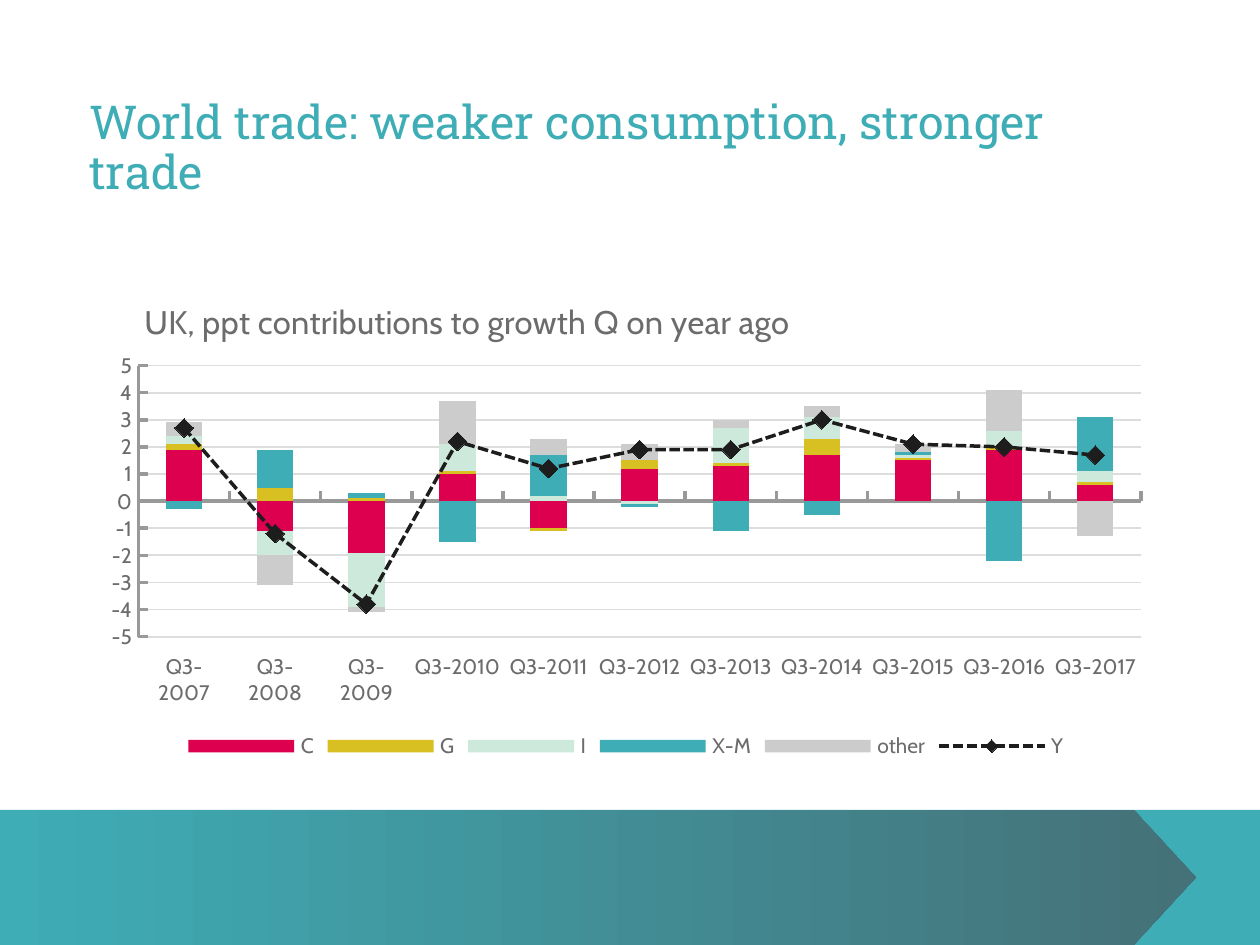
"""Build the slide on UK contributions to growth: stacked columns with a growth line."""
from pptx import Presentation
from pptx.chart.data import CategoryChartData
from pptx.dml.color import RGBColor
from pptx.enum.chart import XL_CHART_TYPE as ChartType, XL_LEGEND_POSITION as LegendPos
from pptx.enum.chart import XL_MARKER_STYLE as Marker, XL_TICK_LABEL_POSITION as LabelPos
from pptx.enum.chart import XL_TICK_MARK as Tick
from pptx.enum.dml import MSO_LINE_DASH_STYLE as Dash
from pptx.enum.shapes import MSO_SHAPE as Preset
from pptx.enum.text import MSO_ANCHOR as Anchor
from pptx.oxml import parse_xml
from pptx.oxml.ns import nsdecls, qn
from pptx.util import Pt

TEAL = RGBColor(0x3E, 0xAD, 0xB6)
SLATE = RGBColor(0x45, 0x71, 0x78)
CRIMSON = RGBColor(0xDC, 0x00, 0x4E)
MUSTARD = RGBColor(0xD8, 0xBF, 0x22)
MINT = RGBColor(0xCC, 0xE9, 0xDB)
SILVER = RGBColor(0xCC, 0xCC, 0xCC)
INK = RGBColor(0x1D, 0x1D, 0x1D)
LABEL = RGBColor(0x6C, 0x6C, 0x6C)
AXIS = RGBColor(0x99, 0x99, 0x99)
GRID = RGBColor(0xDD, 0xDD, 0xDD)

HEADLINE = "World trade: weaker consumption, stronger trade"
CHART_TITLE = "UK, ppt contributions to growth Q on year ago"
QUARTERS = [f"Q3-{year}" for year in range(2007, 2018)]
CONTRIBUTIONS = [
    ("C", CRIMSON, (1.9, -1.1, -1.9, 1, -1, 1.2, 1.3, 1.7, 1.5, 1.9, 0.6)),
    ("G", MUSTARD, (0.2, 0.5, 0.1, 0.1, -0.1, 0.3, 0.1, 0.6, 0.1, 0.1, 0.1)),
    ("I", MINT, (0.3, -0.9, -2, 1, 0.2, -0.1, 1.3, 0.8, 0.1, 0.6, 0.4)),
    ("X-M", TEAL, (-0.3, 1.4, 0.2, -1.5, 1.5, -0.1, -1.1, -0.5, 0.1, -2.2, 2)),
    ("other", SILVER, (0.5, -1.1, -0.2, 1.6, 0.6, 0.6, 0.3, 0.4, 0.3, 1.5, -1.3)),
]
GROWTH = ("Y", (2.7, -1.2, -3.8, 2.2, 1.2, 1.9, 1.9, 3, 2.1, 2, 1.7))

WIDTH, HEIGHT = 540, 405
BAND_TOP = 347.1
BAND_HEIGHT = HEIGHT - BAND_TOP
ARROW_WIDTH = 512.5
LEFT, CONTENT_WIDTH = 38.2, 460


def style_font(font, name, size, color):
    font.name, font.size, font.bold = name, Pt(size), False
    font.color.rgb = color


def add_band(slide, preset, width):
    band = slide.shapes.add_shape(preset, 0, Pt(BAND_TOP), Pt(width), Pt(BAND_HEIGHT))
    band.shadow.inherit = False
    band.line.fill.background()
    return band


def add_headline(slide):
    headline = slide.shapes.add_textbox(Pt(LEFT), Pt(22.3), Pt(CONTENT_WIDTH), Pt(63.4))
    frame = headline.text_frame
    frame.word_wrap = True
    frame.vertical_anchor = Anchor.BOTTOM
    frame.margin_left = frame.margin_right = frame.margin_top = frame.margin_bottom = 0
    paragraph = frame.paragraphs[0]
    paragraph.line_spacing = 0.9
    run = paragraph.add_run()
    run.text = HEADLINE
    style_font(run.font, "Roboto Slab", 20, TEAL)


def place(parent, index, target="", **fractions):
    """Give a chart part a fixed place, as fractions of the chart."""
    for layout in parent.findall(qn("c:layout")):
        parent.remove(layout)
    inner = f'<c:layoutTarget val="{target}"/>' if target else ""
    modes = "".join(f'<c:{side}Mode val="edge"/>' for side in "xy")
    sizes = "".join(f'<c:{key} val="{value}"/>' for key, value in fractions.items())
    parent.insert(index, parse_xml(
        f'<c:layout {nsdecls("c")}><c:manualLayout>{inner}{modes}{sizes}'
        '</c:manualLayout></c:layout>'))


def move_growth_to_line(chart):
    """Turn the last column series into a line on the same axes."""
    columns = chart.plots[0]._element
    growth = columns.findall(qn("c:ser"))[-1]
    for invert in growth.findall(qn("c:invertIfNegative")):
        growth.remove(invert)
    line_plot = parse_xml(
        f'<c:lineChart {nsdecls("c")}><c:grouping val="standard"/>'
        '<c:varyColors val="0"/><c:marker val="1"/></c:lineChart>')
    line_plot.insert(2, growth)
    for axis_id in columns.findall(qn("c:axId")):
        line_plot.append(parse_xml(f'<c:axId {nsdecls("c")} val="{axis_id.get("val")}"/>'))
    columns.addnext(line_plot)
    return chart.plots[1].series[0]


def style_axes(chart):
    for axis in (chart.category_axis, chart.value_axis):
        axis.major_tick_mark, axis.minor_tick_mark = Tick.INSIDE, Tick.NONE
        axis.format.line.color.rgb = AXIS
        axis.format.line.width = Pt(1.5)
        style_font(axis.tick_labels.font, "Cabin", 9, LABEL)
    chart.category_axis.tick_label_position = LabelPos.LOW
    growth_axis = chart.value_axis
    growth_axis.minimum_scale, growth_axis.maximum_scale = -5, 5
    growth_axis.major_unit = 1
    growth_axis.tick_labels.number_format = "0"
    growth_axis.tick_labels.number_format_is_linked = False
    growth_axis.major_gridlines.format.line.color.rgb = GRID
    growth_axis.major_gridlines.format.line.width = Pt(0.75)


def add_growth_chart(slide):
    data = CategoryChartData(number_format="0.0")
    data.categories = QUARTERS
    for name, _, values in CONTRIBUTIONS:
        data.add_series(name, values)
    data.add_series(*GROWTH)
    chart = slide.shapes.add_chart(ChartType.COLUMN_STACKED, Pt(LEFT), Pt(113.8),
                                   Pt(CONTENT_WIDTH), Pt(214.5), data).chart
    style_font(chart.font, "Cabin", 10, INK)

    growth = move_growth_to_line(chart)
    growth.smooth = False
    growth.format.line.color.rgb = INK
    growth.format.line.width = Pt(1.5)
    growth.format.line.dash_style = Dash.SQUARE_DOT
    growth.marker.style, growth.marker.size = Marker.DIAMOND, 8
    growth.marker.format.fill.solid()
    growth.marker.format.fill.fore_color.rgb = INK
    growth.marker.format.line.color.rgb = INK

    columns = chart.plots[0]
    columns.gap_width, columns.overlap, columns.vary_by_categories = 150, 100, False
    for series, (_, color, _) in zip(columns.series, CONTRIBUTIONS):
        series.format.fill.solid()
        series.format.fill.fore_color.rgb = color

    style_axes(chart)
    chart.has_title = True
    run = chart.chart_title.text_frame.paragraphs[0].add_run()
    run.text = CHART_TITLE
    style_font(run.font, "Cabin", 14, LABEL)
    place(chart.chart_title._element, 1, x=0.046, y=0.055)
    place(columns._element.getparent(), 0, "inner", x=0.046, y=0.2, w=0.934, h=0.542)

    chart.has_legend = True
    chart.legend.position = LegendPos.BOTTOM
    chart.legend.include_in_layout = False
    style_font(chart.legend.font, "Cabin", 9, LABEL)


def main():
    deck = Presentation()
    deck.slide_width, deck.slide_height = Pt(WIDTH), Pt(HEIGHT)
    slide = deck.slides.add_slide(deck.slide_layouts[6])

    footer = add_band(slide, Preset.RECTANGLE, WIDTH)
    footer.fill.solid()
    footer.fill.fore_color.rgb = TEAL
    arrow = add_band(slide, Preset.PENTAGON, ARROW_WIDTH)
    arrow.adjustments[0] = 0.46
    arrow.fill.gradient()
    arrow.fill.gradient_angle = 0
    for stop, color, position in zip(arrow.fill.gradient_stops, (TEAL, SLATE), (0, 1)):
        stop.color.rgb, stop.position = color, position

    add_headline(slide)
    add_growth_chart(slide)
    deck.save("out.pptx")


if __name__ == "__main__":
    main()
